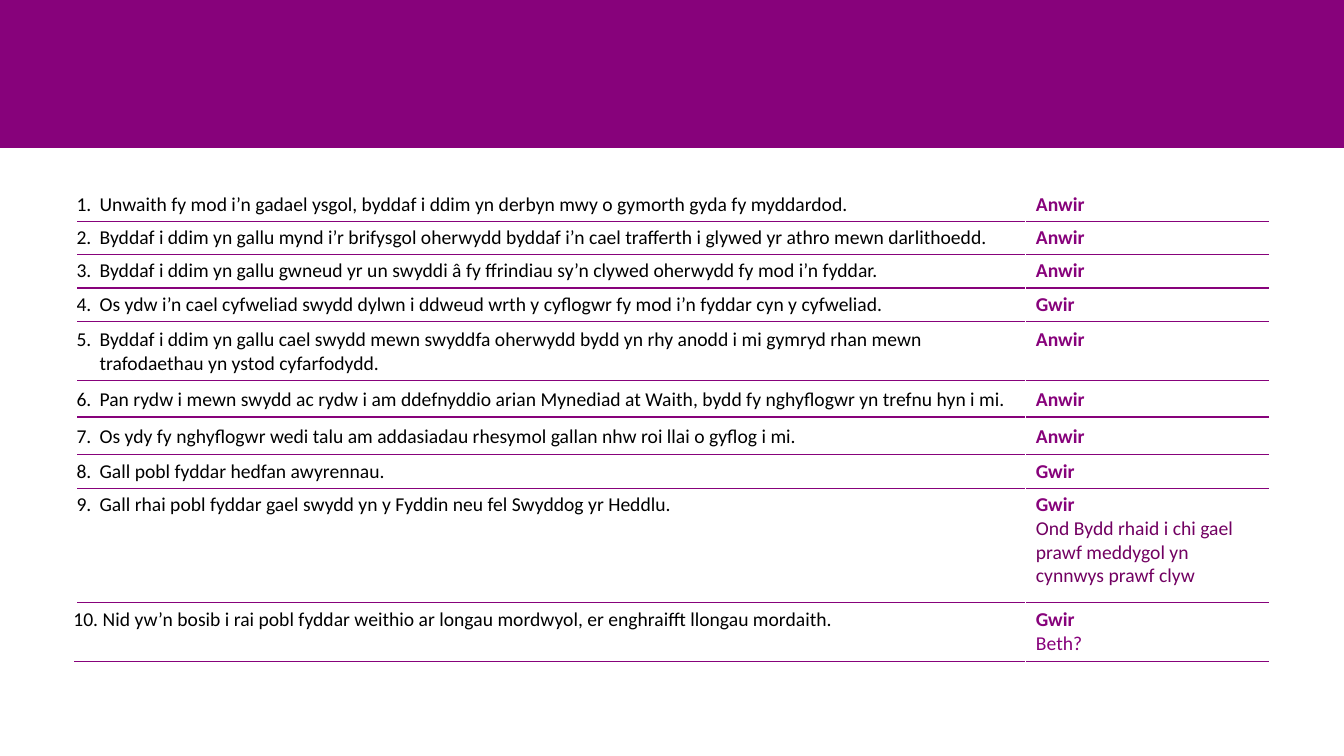
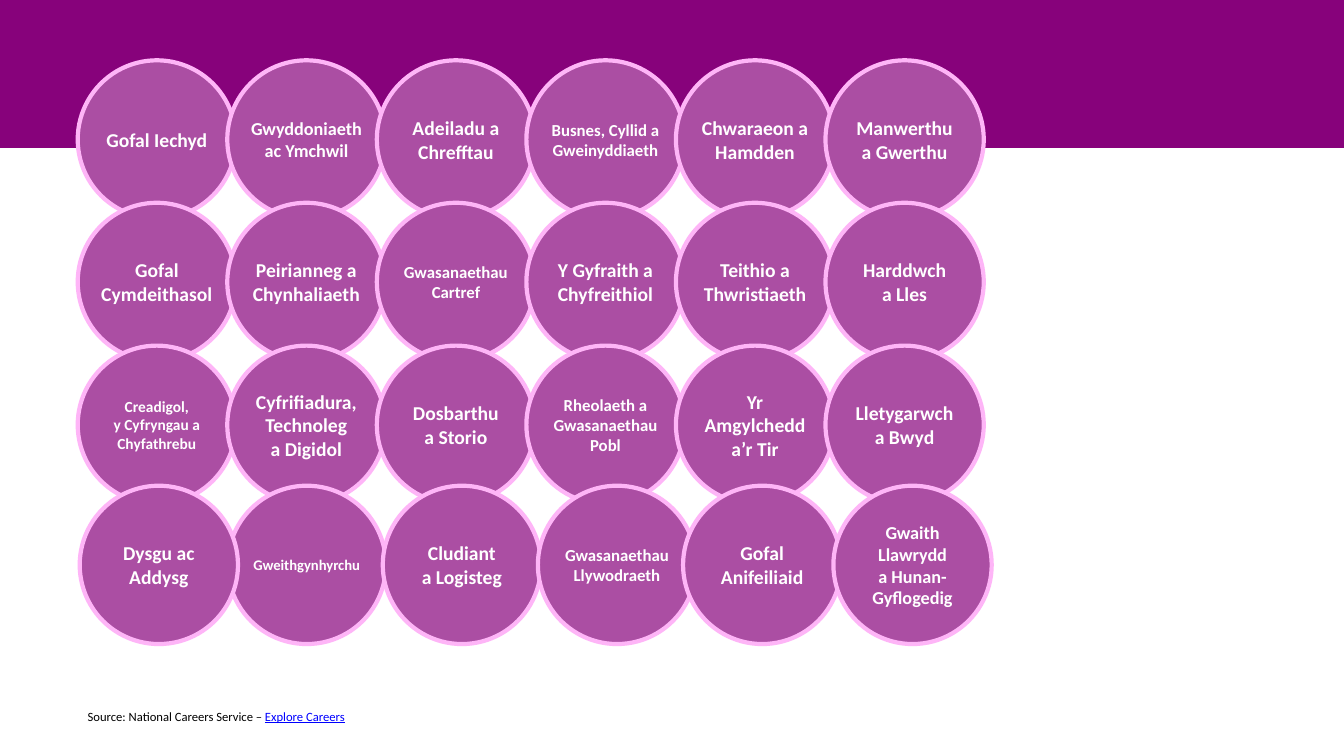
from lxml.etree import SubElement
from pptx import Presentation
from pptx.dml.color import RGBColor
from pptx.enum.shapes import MSO_SHAPE
from pptx.enum.text import MSO_ANCHOR, PP_ALIGN
from pptx.oxml.ns import qn
from pptx.util import Cm, Pt

FONT = "Calibri"
HUES = {
    "band": "87027B", "note": "720062", "disc": "AB4EA3", "ring": "FEB5F7",
    "text": "000000", "paper": "FFFFFF", "link": "0000FF",
}
WIDE, HIGH, BAND = 33.88, 19.05, 3.73

# Top, height, statement, answer, note and its colour
QUIZ = [
    (4.72, 0.84, "Unwaith fy mod i’n gadael ysgol, byddaf i ddim yn derbyn mwy o gymorth "
     "gyda fy myddardod.", "Anwir", None),
    (5.56, 0.84, "Byddaf i ddim yn gallu mynd i’r brifysgol oherwydd byddaf i’n cael trafferth "
     "i glywed yr athro mewn darlithoedd.", "Anwir", None),
    (6.4, 0.84, "Byddaf i ddim yn gallu gwneud yr un swyddi â fy ffrindiau sy’n clywed "
     "oherwydd fy mod i’n fyddar.", "Anwir", None),
    (7.24, 0.84, "Os ydw i’n cael cyfweliad swydd dylwn i ddweud wrth y cyflogwr fy mod i’n "
     "fyddar cyn y cyfweliad.", "Gwir", None),
    (8.13, 1.45, "Byddaf i ddim yn gallu cael swydd mewn swyddfa oherwydd bydd yn rhy anodd i mi "
     "gymryd rhan mewn trafodaethau yn ystod cyfarfodydd.", "Anwir", None),
    (9.65, 0.84, "Pan rydw i mewn swydd ac rydw i am ddefnyddio arian Mynediad at Waith, bydd fy "
     "nghyflogwr yn trefnu hyn i mi.", "Anwir", None),
    (10.59, 0.84, "Os ydy fy nghyflogwr wedi talu am addasiadau rhesymol gallan nhw roi llai o "
     "gyflog i mi.", "Anwir", None),
    (11.46, 0.84, "Gall pobl fyddar hedfan awyrennau.", "Gwir", None),
    (12.29, 2.9, "Gall rhai pobl fyddar gael swydd yn y Fyddin neu fel Swyddog yr Heddlu.",
     "Gwir", ("Ond Bydd rhaid i chi gael prawf meddygol yn cynnwys prawf clyw", "note")),
    (15.19, 1.47, "Nid yw’n bosib i rai pobl fyddar weithio ar longau mordwyol, er enghraifft "
     "llongau mordaith.", "Gwir", ("Beth?", "band")),
]
SPLIT, END = 25.86, 31.98

DISC = 3.99
GRID = [1.96 + 3.77 * col for col in range(6)]
LAST = [5.74, 9.65, 13.56, 17.22, 21.01, 2.01]  # the first disc lies on top
# Top, left edges, labels with text size
JOBS = [
    (1.52, GRID, [("Gofal Iechyd", 14), ("Gwyddoniaeth ac Ymchwil", 13),
                  ("Adeiladu a Chrefftau", 14), ("Busnes, Cyllid a Gweinyddiaeth", 12),
                  ("Chwaraeon a Hamdden", 14), ("Manwerthu\na Gwerthu", 14)]),
    (5.11, GRID, [("Gofal Cymdeithasol", 14), ("Peirianneg a Chynhaliaeth", 14),
                  ("Gwasanaethau Cartref", 12), ("Y Gyfraith a Chyfreithiol", 14),
                  ("Teithio a Thwristiaeth", 14), ("Harddwch\na Lles", 14)]),
    (8.71, GRID, [("Creadigol,\ny Cyfryngau a Chyfathrebu", 11),
                  ("Cyfrifiadura, Technoleg\na Digidol", 14), ("Dosbarthu\na Storio", 14),
                  ("Rheolaeth a Gwasanaethau Pobl", 12), ("Yr Amgylchedd\na’r Tir", 14),
                  ("Lletygarwch\na Bwyd", 14)]),
    (12.24, LAST, [("Gweithgynhyrchu", 10.5), ("Cludiant\na Logisteg", 14),
                   ("Gwasanaethau Llywodraeth", 12), ("Gofal Anifeiliaid", 14),
                   ("Gwaith Llawrydd\na Hunan-Gyflogedig", 13), ("Dysgu ac Addysg", 14)]),
]


def rgb(name):
    return RGBColor.from_string(HUES[name])


def write(para, text, size, hue, bold=False, under=False):
    for i, line in enumerate(text.split("\n")):
        if i:
            para.add_line_break()
        run = para.add_run()
        run.text = line
        font = run.font
        font.name, font.size, font.bold = FONT, Pt(size), bold
        font.underline = under
        font.color.rgb = rgb(hue)


def shape(slide, kind, box, fill):
    item = slide.shapes.add_shape(kind, *map(Cm, box))
    item.shadow.inherit = False
    item.fill.solid()
    item.fill.fore_color.rgb = rgb(fill)
    item.line.fill.background()
    return item


def edge(cell, sides):
    """Draw 1 pt borders; a side with no colour gets no line."""
    props = cell._tc.get_or_add_tcPr()
    for side in "LRTB":
        line = SubElement(props, qn("a:ln" + side), w=str(Pt(1)))
        if side in sides:
            fill = SubElement(line, qn("a:solidFill"))
            SubElement(fill, qn("a:srgbClr"), val=HUES[sides[side]])
        else:
            SubElement(line, qn("a:noFill"))


def strip(slide, left, right, top, high, sides):
    """Add a one-cell table and return its cell."""
    box = map(Cm, (left, top, right - left, high))
    table = slide.shapes.add_table(1, 1, *box).table
    table.first_row = table.horz_banding = False
    cell = table.cell(0, 0)
    edge(cell, sides)
    cell.fill.background()
    return cell


def number(para, num, hang):
    props = para._p.get_or_add_pPr()
    props.set("marL", str(Cm(hang)))
    props.set("indent", str(-Cm(hang)))
    SubElement(props, qn("a:buFont"), typeface="+mj-lt")
    SubElement(props, qn("a:buAutoNum"), type="arabicPeriod", startAt=str(num))


def add_band(deck, slide):
    """Move a band to the slide master, behind all else."""
    band = shape(slide, MSO_SHAPE.RECTANGLE, (0, 0, WIDE, BAND), "band").element
    band.xpath("./p:nvSpPr/p:cNvPr")[0].set("id", "99")
    deck.slide_master.shapes.element.insert(2, band)


def add_quiz(slide):
    for num, (top, high, claim, reply, note) in enumerate(QUIZ, 1):
        left, hang = (1.93, 0.58) if num < 10 else (1.85, 0.74)
        cell = strip(slide, left, SPLIT, top, high, {"L": "paper", "R": "paper", "B": "band"})
        cell.margin_left = 0
        para = cell.text_frame.paragraphs[0]
        number(para, num, hang)
        write(para, claim, 14, "text")

        cell = strip(slide, SPLIT, END, top, high, {"L": "paper", "B": "band"})
        write(cell.text_frame.paragraphs[0], reply, 14, "band", bold=True)
        if note:
            text, hue = note
            write(cell.text_frame.add_paragraph(), text, 14, hue)


def add_jobs(slide):
    for top, lefts, labels in JOBS:
        for left, (label, size) in zip(lefts, labels):
            disc = shape(slide, MSO_SHAPE.OVAL, (left, top, DISC, DISC), "disc")
            disc.line.color.rgb = rgb("ring")
            disc.line.width = Pt(3)
            frame = disc.text_frame
            frame.word_wrap = True
            frame.vertical_anchor = MSO_ANCHOR.MIDDLE
            frame.margin_left = frame.margin_right = 0
            frame.margin_top = frame.margin_bottom = 0
            para = frame.paragraphs[0]
            para.alignment = PP_ALIGN.CENTER
            write(para, label, size, "paper", bold=True)


def add_source(slide):
    frame = slide.shapes.add_textbox(*map(Cm, (1.96, 17.73, 22.81, 0.64))).text_frame
    frame.word_wrap = True
    para = frame.paragraphs[0]
    write(para, "Source: National Careers Service – ", 9, "text")
    write(para, "Explore Careers", 9, "link", under=True)


def main():
    deck = Presentation()
    deck.slide_width, deck.slide_height = Cm(WIDE), Cm(HIGH)
    blank = deck.slide_layouts[6]
    quiz, jobs = (deck.slides.add_slide(blank) for _ in range(2))
    add_band(deck, quiz)
    add_quiz(quiz)
    add_source(jobs)
    add_jobs(jobs)
    deck.save("out.pptx")


if __name__ == "__main__":
    main()
